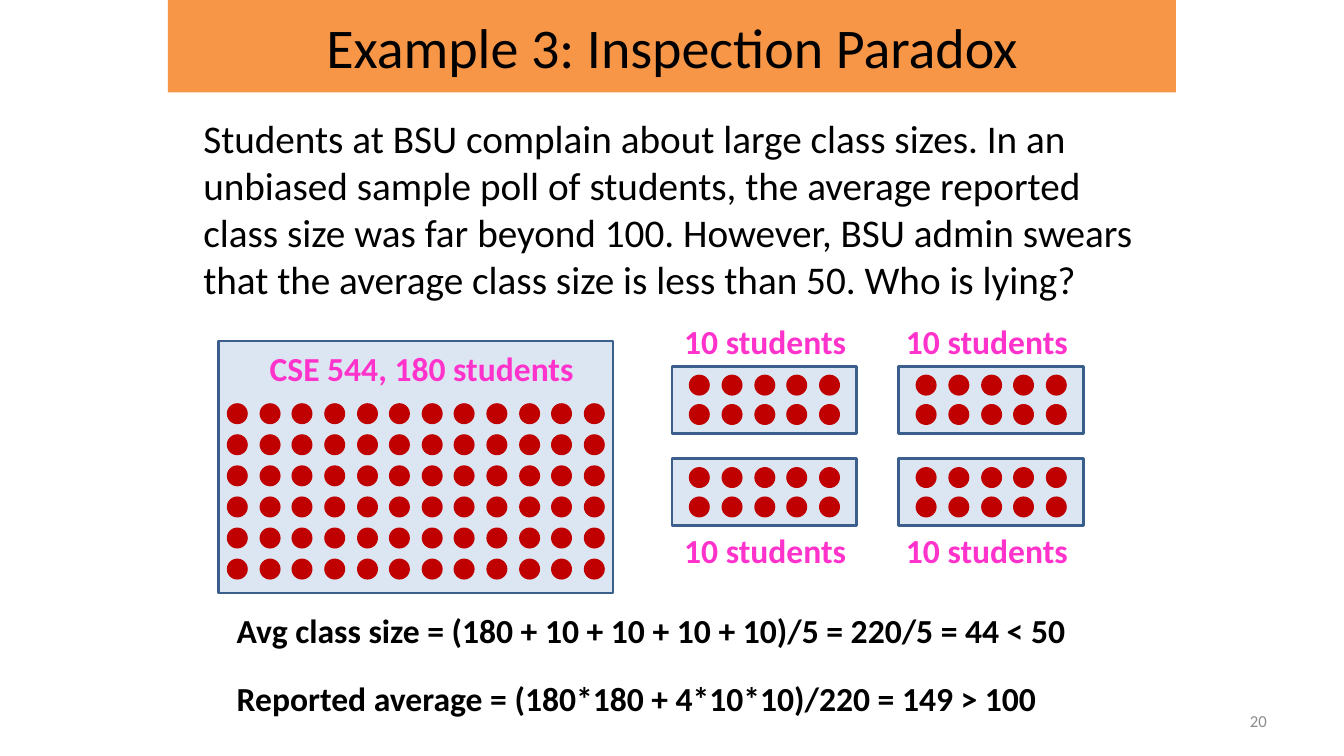
from pptx import Presentation
from pptx.dml.color import RGBColor
from pptx.enum.shapes import MSO_SHAPE
from pptx.enum.text import MSO_ANCHOR, MSO_AUTO_SIZE, PP_ALIGN
from pptx.oxml.ns import qn
from pptx.util import Pt

RECT, OVAL = MSO_SHAPE.RECTANGLE, MSO_SHAPE.OVAL
LEFT, CENTER, RIGHT = PP_ALIGN.LEFT, PP_ALIGN.CENTER, PP_ALIGN.RIGHT
TOP, MIDDLE = MSO_ANCHOR.TOP, MSO_ANCHOR.MIDDLE
PX = 7620  # EMU per px, 120 px to the inch
BLACK, PINK = "000000", "FF33CC"
rgb = RGBColor.from_string


def write(sp, box, text, size, color, align, anchor=TOP, bold=False):
    sp.left, sp.top, sp.width, sp.height = [v * PX for v in box]
    tf = sp.text_frame
    tf.word_wrap = True
    tf.auto_size = MSO_AUTO_SIZE.NONE
    tf.vertical_anchor = anchor
    p = tf.paragraphs[0]
    p.alignment = align
    p.space_before = Pt(0)
    r = p.add_run()
    r.text = text
    r.font.name, r.font.size, r.font.bold = "Calibri", Pt(size), bold
    r.font.color.rgb = rgb(color)
    return p


def draw(shapes, kind, x, y, w, h, fill, line=None):
    sp = shapes.add_shape(kind, x * PX, y * PX, w * PX, h * PX)
    sp.shadow.inherit = False
    sp.fill.solid()
    sp.fill.fore_color.rgb = rgb(fill)
    if line:
        sp.line.color.rgb = rgb(line)
        sp.line.width = Pt(2)
    else:
        sp.line.fill.background()


prs = Presentation()
prs.slide_width, prs.slide_height = 1600 * PX, 900 * PX
s = prs.slides.add_slide(prs.slide_layouts[1])

# Title band
title = s.shapes.title
title.fill.solid()
title.fill.fore_color.rgb = rgb("F79646")
write(title, (200, 0, 1200, 110), "Example 3: Inspection Paradox", 40, BLACK, CENTER, MIDDLE)

# Question
question = (
    "Students at BSU complain about large class sizes. In an unbiased sample poll "
    "of students, the average reported class size was far beyond 100. However, BSU "
    "admin swears that the average class size is less than 50. Who is lying?"
)
p = write(s.placeholders[1], (230, 130, 1140, 296), question, 28, BLACK, LEFT)
pPr = p._p.get_or_add_pPr()
pPr.set("marL", "0")
pPr.set("indent", "0")
pPr.append(pPr.makeelement(qn("a:buNone"), {}))

# Classrooms: room box, then first dot, columns, rows, width spanned, row pitch
rooms = [((260, 406, 470, 300), (270, 480, 12, 6, 425, 37))]
for x in (800, 1070):
    for y in (436, 546):
        rooms.append(((x, y, 220, 80), (x + 20, y + 10, 5, 2, 155, 35)))

for room, (x, y, cols, rows, span, pitch) in rooms:
    group = s.shapes.add_group_shape()
    draw(group.shapes, RECT, *room, "DCE6F2", "3A5F8C")
    for row in range(rows):
        for col in range(cols):
            dot_x = x + round(span * col / (cols - 1))
            draw(group.shapes, OVAL, dot_x, y + pitch * row, 25, 25, "C00000")

# Labels and results
texts = [((302, 408, 400, 60), "CSE 544, 180 students", PINK, CENTER)]
for y in (376, 625):
    for x in (796, 1060):
        texts.append(((x, y, 230, 60), "10 students", PINK, CENTER))
texts += [
    ((270, 720, 1040, 60),
     "Avg class size = (180 + 10 + 10 + 10 + 10)/5 = 220/5 = 44 < 50", BLACK, LEFT),
    ((270, 801, 1030, 60),
     "Reported average = (180*180 + 4*10*10)/220 = 149 > 100", BLACK, LEFT),
]
for box, text, color, align in texts:
    write(s.shapes.add_textbox(0, 0, 0, 0), box, text, 24, color, align, bold=True)

# Slide number
write(s.shapes.add_textbox(0, 0, 0, 0), (1147, 834, 373, 48), "20", 12, "8C8C8C", RIGHT, MIDDLE)

prs.save("out.pptx")
